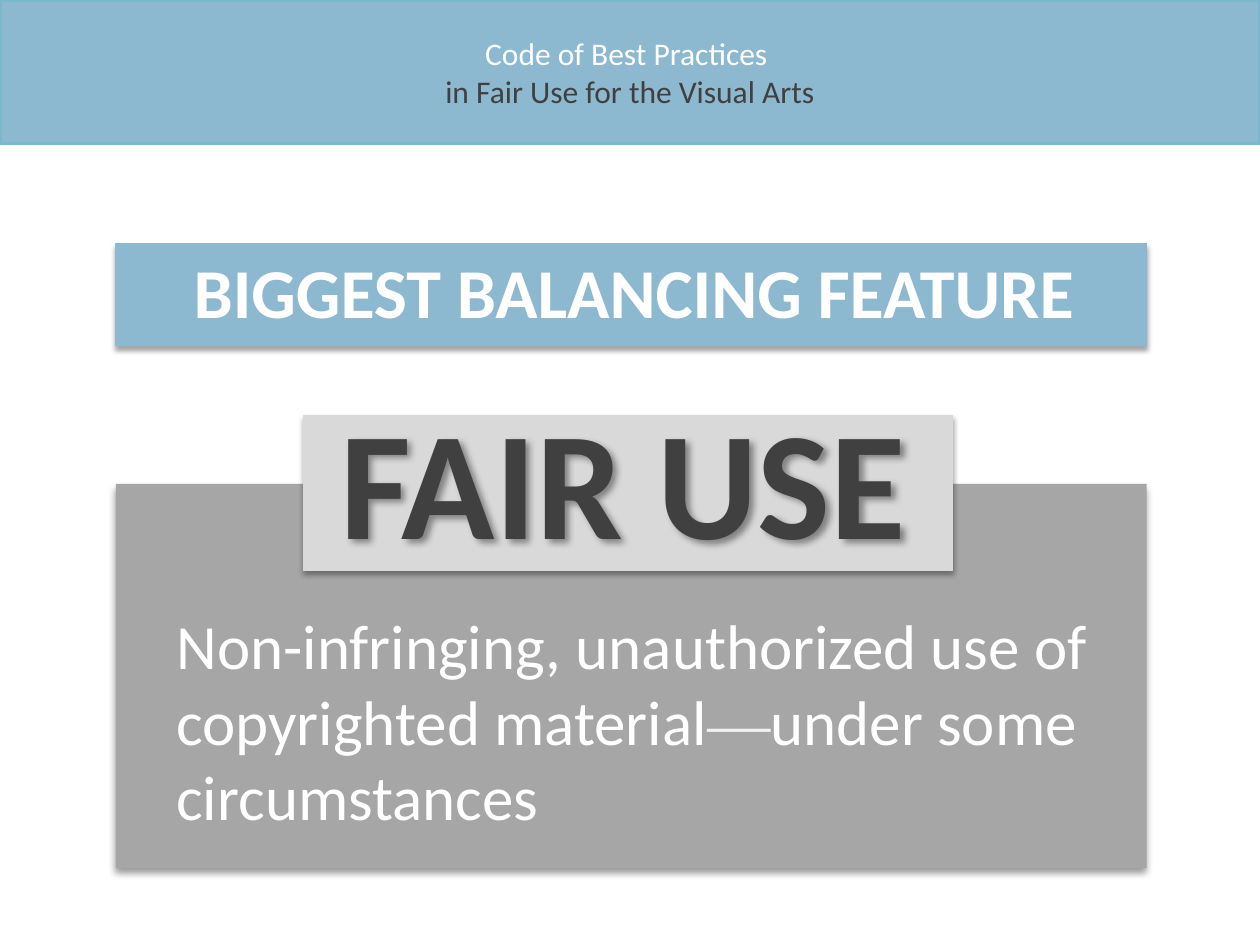
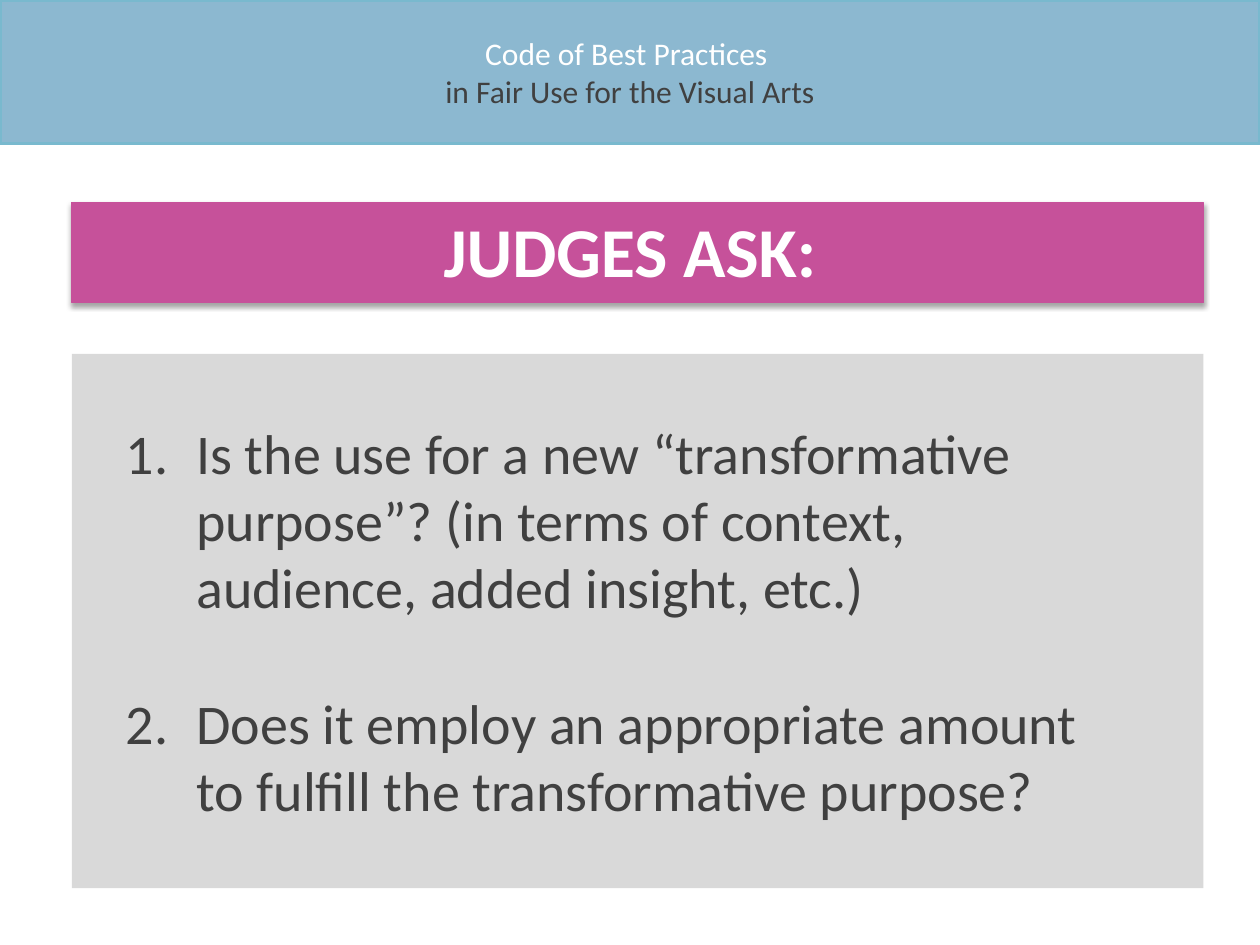
import pptx
import pptx.util
import pptx.dml.color
import pptx.enum.shapes
import pptx.enum.text
import pptx.oxml
import pptx.oxml.ns
from lxml import etree

Inches = pptx.util.Inches
Pt = pptx.util.Pt
ALIGN = pptx.enum.text.PP_ALIGN
ANCHOR = pptx.enum.text.MSO_ANCHOR
COLORS = {
    "blue": "8CB8D0",
    "edge": "79B9CE",
    "pink": "C6519A",
    "gray": "A6A6A6",
    "pale": "D9D9D9",
    "dark": "404040",
    "dash": "F2F2F2",
    "white": "FFFFFF",
    "black": "000000",
}
SOFT = {"alpha": 35, "blur": 3.1, "dist": 1.8, "angle": 90}
DEEP = {"alpha": 40, "blur": 4, "dist": 3, "angle": 90}
SLANTED = {**DEEP, "angle": 45}
HEADING = {"name": "Calibri", "size": Pt(40), "bold": True}


def rgb(name):
    return pptx.dml.color.RGBColor.from_string(COLORS[name])


def apply(target, formats):
    for key, value in formats.items():
        setattr(target, key, value)


def add_shadow(shape, shadow):
    shape.shadow.inherit = False
    effects = shape.element.spPr.find(pptx.oxml.ns.qn("a:effectLst"))
    outer = etree.SubElement(
        effects,
        pptx.oxml.ns.qn("a:outerShdw"),
        blurRad=str(Pt(shadow["blur"])),
        dist=str(Pt(shadow["dist"])),
        dir=str(shadow["angle"] * 60000),
        rotWithShape="0",
    )
    color = etree.SubElement(outer, pptx.oxml.ns.qn("a:srgbClr"), val=COLORS["black"])
    etree.SubElement(color, pptx.oxml.ns.qn("a:alpha"), val=str(shadow["alpha"] * 1000))


def add_panel(page, box, fill, line=None, width=0.75, shadow=None):
    panel = page.shapes.add_shape(
        pptx.enum.shapes.MSO_SHAPE.RECTANGLE, *map(Inches, box)
    )
    panel.shadow.inherit = False
    panel.fill.solid()
    panel.fill.fore_color.rgb = rgb(fill)
    if line:
        panel.line.color.rgb = rgb(line)
        panel.line.width = Pt(width)
    else:
        panel.line.fill.background()
    if shadow:
        add_shadow(panel, shadow)
    return panel


def add_span(para, text, color, **formats):
    span = para.add_run()
    span.text = text
    span.font.color.rgb = rgb(color)
    apply(span.font, {"name": "Calibri", **formats})


def next_para(frame, index):
    return frame.add_paragraph() if index else frame.paragraphs[0]


def add_header(page, box):
    frame = add_panel(page, box, "blue", "edge", 2).text_frame
    apply(frame, {"word_wrap": True, "vertical_anchor": ANCHOR.MIDDLE})
    lines = [
        ("Code of Best Practices ", "white"),
        ("in Fair Use for the Visual Arts", "dark"),
    ]
    for index, (text, color) in enumerate(lines):
        para = next_para(frame, index)
        para.alignment = ALIGN.CENTER
        add_span(para, text, color, size=Pt(18))


def add_heading(page, box, text, color, center, rise):
    left, top, width, height = box
    add_panel(page, box, color, color, shadow=SOFT)
    title = page.shapes.title
    title.element.getparent().append(title.element)
    apply(title, {
        "left": Inches(center - width / 2),
        "top": Inches(top - rise),
        "width": Inches(width),
        "height": Inches(0.77),
    })
    frame = title.text_frame
    apply(frame, {
        "word_wrap": True,
        "auto_size": pptx.enum.text.MSO_AUTO_SIZE.NONE,
        "vertical_anchor": ANCHOR.TOP,
    })
    para = frame.paragraphs[0]
    para.alignment = ALIGN.CENTER
    add_span(para, text, "white", **HEADING)


def add_definition(page, box):
    left, top, width, height = box
    frame = add_panel(page, box, "gray", shadow=DEEP).text_frame
    apply(frame, {
        "word_wrap": True,
        "vertical_anchor": ANCHOR.MIDDLE,
        "margin_left": Inches(0.48),
        "margin_top": Inches(0.75),
    })
    para = frame.paragraphs[0]
    para.alignment = ALIGN.LEFT
    size = Pt(36)
    add_span(para, "Non-infringing, unauthorized use of copyrighted material", "white", size=size)
    add_span(para, "—", "dash", size=size, name="Times New Roman")
    add_span(para, "under some circumstances", "white", size=size)

    add_panel(page, (left + 1.49, top - 0.54, 5.15, 1.23), "pale", "pale", shadow=SOFT)
    term = page.shapes.add_textbox(
        Inches(left + 1.68), Inches(top - 0.83), Inches(4.79), Inches(1.58)
    )
    term.fill.background()
    add_shadow(term, SLANTED)
    term.text_frame.word_wrap = True
    add_span(term.text_frame.paragraphs[0], "FAIR USE", "dark", size=Pt(88), bold=True)


def add_questions(page, box, questions):
    left, top, width, height = box
    add_panel(page, box, "pale")
    inner = (left + 0.33, top + 0.46, width - 0.81, height - 0.91)
    frame = add_panel(page, inner, "pale").text_frame
    apply(frame, {"word_wrap": True, "vertical_anchor": ANCHOR.TOP})
    for index, question in enumerate(questions):
        para = next_para(frame, index)
        props = para._p.get_or_add_pPr()
        props.set("marL", str(Inches(0.56)))
        props.set("indent", str(-Inches(0.56)))
        etree.SubElement(props, pptx.oxml.ns.qn("a:buFont"), typeface="+mj-lt")
        etree.SubElement(props, pptx.oxml.ns.qn("a:buAutoNum"), type="arabicPeriod")
        para.alignment = ALIGN.LEFT
        if index:
            para.space_before = Pt(39)
        add_span(para, question, "dark", size=Pt(32))


def add_page(deck):
    page = deck.slides.add_slide(deck.slide_layouts[5])
    add_header(page, (0, 0, 10, 1.14))
    return page


def main():
    deck = pptx.Presentation()
    apply(deck, {"slide_width": Inches(10), "slide_height": Inches(7.5)})

    page = add_page(deck)
    add_definition(page, (0.92, 3.84, 8.18, 3.05))
    add_heading(page, (0.92, 1.93, 8.18, 0.81), "BIGGEST BALANCING FEATURE", "blue", 5.03, 0.01)

    page = add_page(deck)
    add_questions(page, (0.57, 2.81, 8.98, 4.24), [
        "Is the use for a new “transformative purpose”? "
        "(in terms of context, audience, added insight, etc.)",
        "Does it employ an appropriate amount to fulfill the transformative purpose?",
    ])
    add_heading(page, (0.57, 1.61, 8.98, 0.79), "JUDGES ASK:", "pink", 5, 0.01)

    deck.save("out.pptx")


if __name__ == "__main__":
    main()
